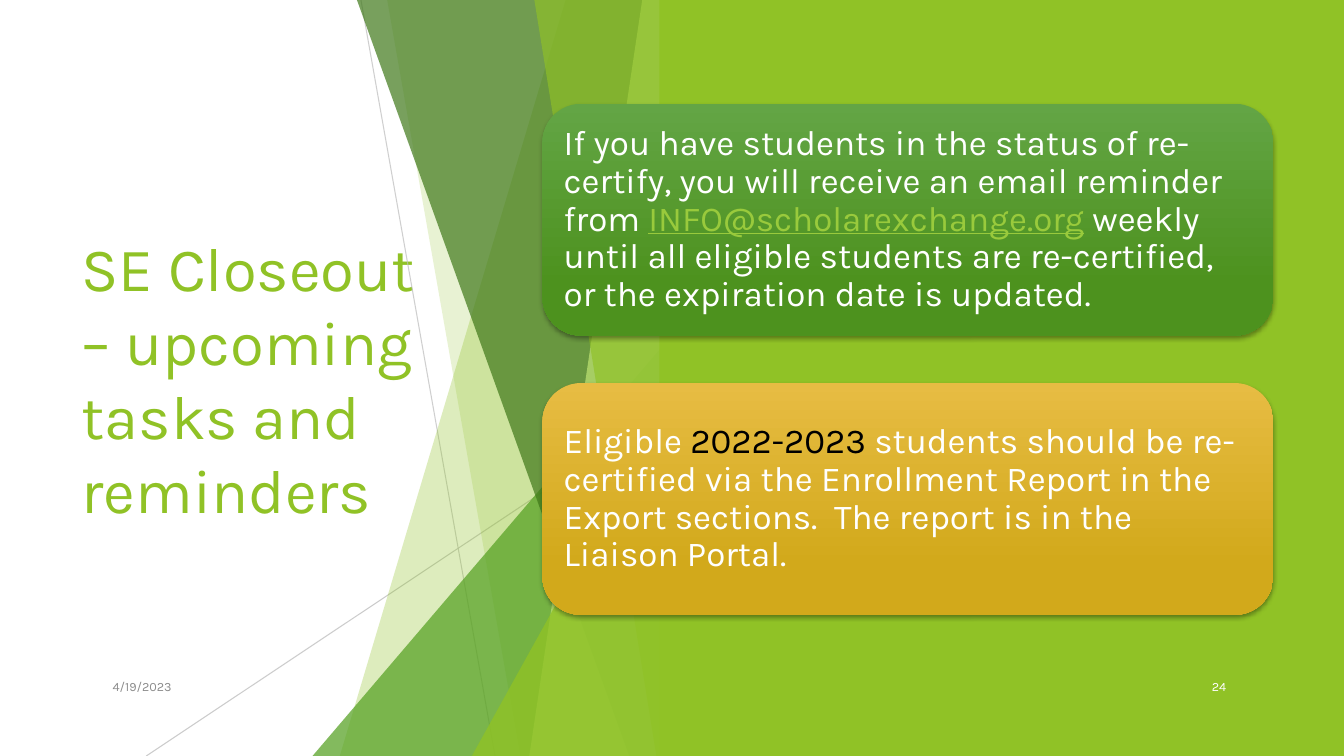
from lxml import etree
from pptx import Presentation
from pptx.dml.color import RGBColor
from pptx.enum.shapes import MSO_CONNECTOR, MSO_SHAPE
from pptx.enum.text import MSO_ANCHOR, MSO_AUTO_SIZE, PP_ALIGN
from pptx.oxml.ns import qn
from pptx.util import Inches, Pt

RECTANGLE, ROUNDED = MSO_SHAPE.RECTANGLE, MSO_SHAPE.ROUNDED_RECTANGLE
TRIANGLE, STRAIGHT = MSO_SHAPE.ISOSCELES_TRIANGLE, MSO_CONNECTOR.STRAIGHT
LEFT, RIGHT, MIDDLE = PP_ALIGN.LEFT, PP_ALIGN.RIGHT, MSO_ANCHOR.MIDDLE

THEME = {
    "font": "Karla",
    "title_size": 44, "card_size": 25, "footer_size": 9,
    "lime": "90C226", "green": "54A021", "forest": "3F7819", "pale": "C0E474",
    "white": "FFFFFF", "black": "000000", "link": "99CA3C",
    "grey": "8C8C8C", "hairline": "BFBFBF",
    "green_card": ("63A545", "4D921E"), "gold_card": ("E7BC43", "D2A91B"),
}

# Content
TITLE = "SE Closeout – upcoming tasks and reminders"
CARDS = [  # gradient, runs as (text, colour, underlined)
    ("green_card", [
        ("If you have students in the status of re-certify, you will receive "
         "an email reminder from ", "white", False),
        ("INFO@scholarexchange.org", "link", True),
        (" weekly until all eligible students are re-certified, or the "
         "expiration date is updated.", "white", False)]),
    ("gold_card", [
        ("Eligible ", "white", False),
        ("2022-2023 ", "black", False),
        ("students should be re-certified via the Enrollment Report in the "
         "Export sections.  The report is in the Liaison Portal.", "white", False)]),
]
FOOTERS = [("4/19/2023", 0.8, 1, "grey"), ("24", 11.51, 0.75, "white")]

# Decoration, in inches
SLIDE_W, SLIDE_H = 13.33, 7.5
FACET_RIGHT, PANEL_LEFT = 6.66, 6.54
HAIRLINES = [((3.58, 0), (4.91, 7.5), 75), ((6.66, 4.03), (1.45, 7.5), 80)]
FACETS = [  # top-left x (None for a triangle), top y, bottom-left x, colour, opacity
    (5.61, 0, 3.37, "lime", 30),
    (3.84, 0, 5.16, "lime", 20),
    (None, 3.33, 3.1, "green", 72),
    (3.54, 0, 6.24, "forest", 70),
    (6.37, 0, 5.25, "pale", 70),
    (5.3, 0, 6.51, "lime", 65),
    (None, 3.93, 4.68, "lime", 80),
]
CARD_LEFT, CARD_TOP, CARD_W, CARD_H, CARD_STEP = 5.38, 1.03, 7.25, 2.3, 2.77


def color(name):
    return RGBColor.from_string(THEME.get(name, name))


def set_opacity(shape, percent):
    rgb = next(shape.element.iter(qn("a:srgbClr")))
    etree.SubElement(rgb, qn("a:alpha")).set("val", str(percent * 1000))


def paint(shape, name):
    shape.shadow.inherit = False
    shape.fill.solid()
    shape.fill.fore_color.rgb = color(name)
    shape.line.fill.background()


def style(run, size, name, underlined=False):
    run.font.name = THEME["font"]
    run.font.size = Pt(THEME[size])
    run.font.color.rgb = color(name)
    if underlined:
        run.font.underline = True


def add_hairline(shapes, start, end, opacity):
    hairline = shapes.add_connector(STRAIGHT, *map(Inches, start + end))
    hairline.line.color.rgb = color("hairline")
    hairline.line.width = Pt(0.75)
    set_opacity(hairline, opacity)
    etree.SubElement(hairline.element.spPr, qn("a:effectLst"))


def add_facet(shapes, top_left, top, bottom_left, name, opacity):
    if top_left is None:
        facet = shapes.add_shape(
            TRIANGLE, Inches(bottom_left), Inches(top),
            Inches(FACET_RIGHT - bottom_left), Inches(SLIDE_H - top))
        facet.adjustments[0] = 1
    else:
        outline = shapes.build_freeform(Inches(top_left), Inches(top))
        corners = [(FACET_RIGHT, top), (FACET_RIGHT, SLIDE_H), (bottom_left, SLIDE_H)]
        outline.add_line_segments([(Inches(x), Inches(y)) for x, y in corners])
        facet = outline.convert_to_shape()
    paint(facet, name)
    set_opacity(facet, opacity)


def add_card(shapes, top, gradient, runs):
    card = shapes.add_shape(ROUNDED, Inches(CARD_LEFT), Inches(top),
                            Inches(CARD_W), Inches(CARD_H))
    card.line.fill.background()
    card.fill.gradient()
    card.fill.gradient_angle = 270
    for stop, position, name in zip(card.fill.gradient_stops, (0, 0.78), THEME[gradient]):
        stop.position = position
        stop.color.rgb = color(name)

    # Soft shadow below the card
    card.shadow.inherit = False
    effects = card.element.spPr.find(qn("a:effectLst"))
    shadow = etree.SubElement(effects, qn("a:outerShdw"), blurRad=str(Pt(3)),
                              dist=str(Pt(2)), dir="5400000", rotWithShape="0")
    shade = etree.SubElement(shadow, qn("a:srgbClr"), val=THEME["black"])
    etree.SubElement(shade, qn("a:alpha"), val="35000")

    frame = card.text_frame
    frame.word_wrap = True
    frame.vertical_anchor = MIDDLE
    frame.margin_left = frame.margin_right = Inches(0.1)
    frame.margin_top = frame.margin_bottom = Inches(0.1)
    paragraph = frame.paragraphs[0]
    paragraph.alignment = LEFT
    paragraph.line_spacing = 0.9
    for text, name, underlined in runs:
        run = paragraph.add_run()
        run.text = text
        style(run, "card_size", name, underlined)


def add_footer(shapes, text, left, width, name):
    footer = shapes.add_textbox(Inches(left), Inches(6.61), Inches(width), Inches(0.4))
    frame = footer.text_frame
    frame.word_wrap = True
    frame.vertical_anchor = MIDDLE
    frame.text = text
    frame.paragraphs[0].alignment = RIGHT
    style(frame.paragraphs[0].runs[0], "footer_size", name)


def main():
    deck = Presentation()
    deck.slide_width, deck.slide_height = Inches(SLIDE_W), Inches(SLIDE_H)
    slide = deck.slides.add_slide(deck.slide_layouts[5])
    shapes = slide.shapes

    # Title
    title = shapes.title
    title.left, title.top = Inches(0.71), Inches(1.51)
    title.width, title.height = Inches(3.88), Inches(4.48)
    frame = title.text_frame
    frame.text = TITLE
    frame.word_wrap = True
    frame.auto_size = MSO_AUTO_SIZE.NONE
    frame.vertical_anchor = MIDDLE
    frame.margin_right = Inches(0.3)
    frame.paragraphs[0].alignment = LEFT
    style(frame.paragraphs[0].runs[0], "title_size", "lime")

    # Facets and green panel
    for hairline in HAIRLINES:
        add_hairline(shapes, *hairline)
    for facet in FACETS:
        add_facet(shapes, *facet)
    panel = shapes.add_shape(RECTANGLE, Inches(PANEL_LEFT), 0,
                             Inches(SLIDE_W - PANEL_LEFT), Inches(SLIDE_H))
    paint(panel, "lime")

    # Date, slide number and cards
    for footer in FOOTERS:
        add_footer(shapes, *footer)
    for index, (gradient, runs) in enumerate(CARDS):
        add_card(shapes, CARD_TOP + index * CARD_STEP, gradient, runs)

    deck.save("out.pptx")


if __name__ == "__main__":
    main()
